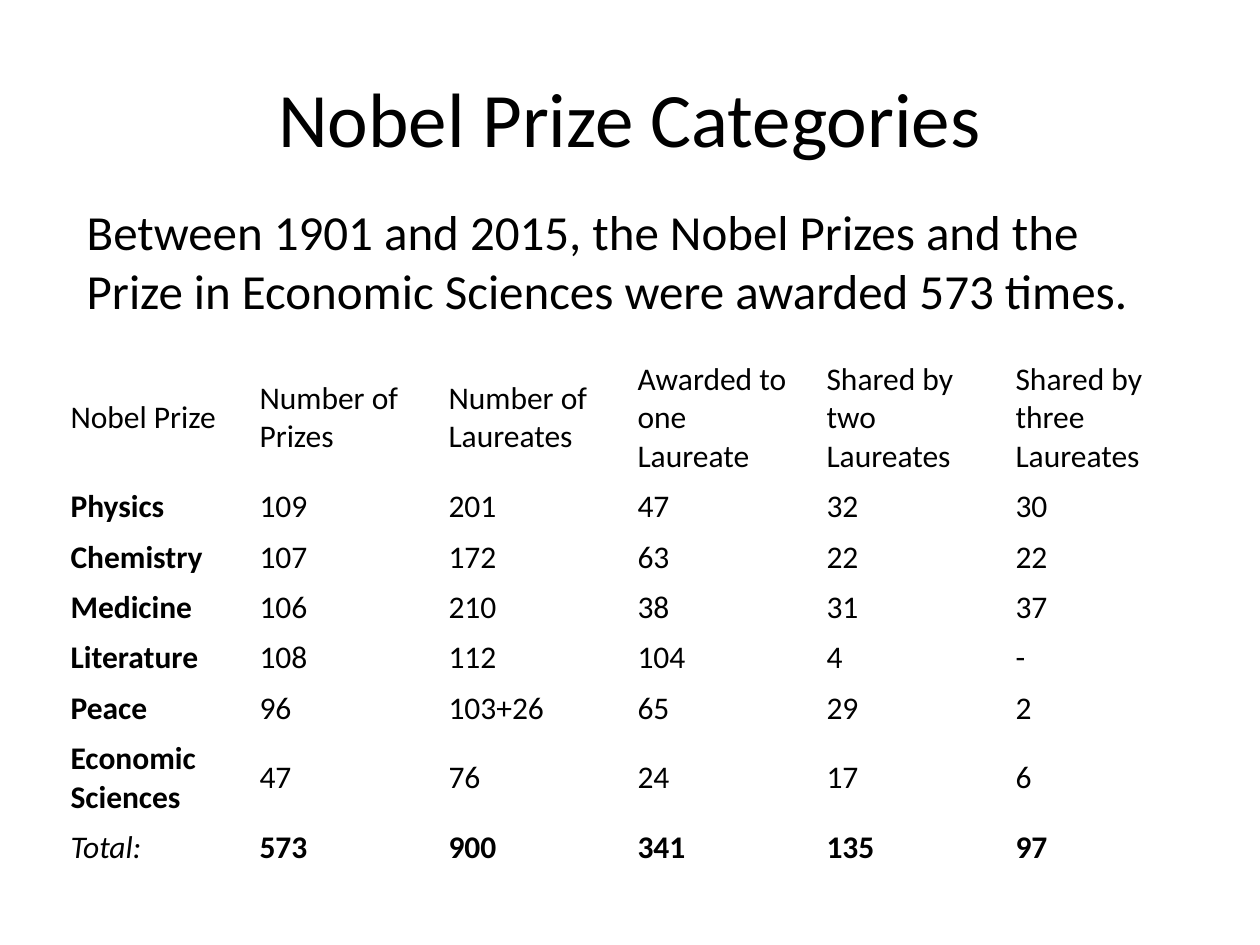
from dataclasses import dataclass

import pptx
import pptx.dml.color
import pptx.enum.text
import pptx.util

Inches = pptx.util.Inches
Align = pptx.enum.text.PP_ALIGN
Anchor = pptx.enum.text.MSO_ANCHOR


@dataclass(frozen=True)
class Theme:
    font: str = "Calibri"
    ink: str = "000000"
    title_size: int = 44
    intro_size: int = 28
    table_size: int = 18


THEME = Theme()

TITLE = "Nobel Prize Categories"
INTRO = ("Between 1901 and 2015, the Nobel Prizes and the "
         "Prize in Economic Sciences were awarded 573 times.")
HEADINGS = ("Nobel Prize", "Number of Prizes", "Number of Laureates",
            "Awarded to one Laureate", "Shared by two Laureates",
            "Shared by three Laureates")
PRIZES = (
    ("Physics", "109", "201", "47", "32", "30"),
    ("Chemistry", "107", "172", "63", "22", "22"),
    ("Medicine", "106", "210", "38", "31", "37"),
    ("Literature", "108", "112", "104", "4", "-"),
    ("Peace", "96", "103+26", "65", "29", "2"),
    ("Economic Sciences", "47", "76", "24", "17", "6"),
)
TOTALS = ("Total:", "573", "900", "341", "135", "97")

COLUMN_WIDTH = 1.5
HEADING_HEIGHT, ROW_HEIGHT, TWO_LINE_HEIGHT = 1.01, 0.4, 0.7


def add_run(paragraph, text, size, bold=False, italic=False):
    run = paragraph.add_run()
    run.text = text
    run.font.name = THEME.font
    run.font.size = pptx.util.Pt(size)
    run.font.bold = bold
    run.font.italic = italic
    run.font.color.rgb = pptx.dml.color.RGBColor.from_string(THEME.ink)


def add_text(slide, text, box, size, align=Align.LEFT, anchor=Anchor.TOP):
    frame = slide.shapes.add_textbox(*map(Inches, box)).text_frame
    frame.word_wrap = True
    frame.vertical_anchor = anchor
    frame.paragraphs[0].alignment = align
    add_run(frame.paragraphs[0], text, size)


def fill_row(row, texts, bold_label=False, italic_label=False, bold_values=False):
    for column, (cell, text) in enumerate(zip(row.cells, texts)):
        is_label = column == 0
        cell.fill.background()
        cell.vertical_anchor = Anchor.MIDDLE
        add_run(cell.text_frame.paragraphs[0], text, THEME.table_size,
                bold=bold_label if is_label else bold_values,
                italic=is_label and italic_label)


def add_prize_table(slide, left, top):
    heights = [HEADING_HEIGHT]
    heights += [TWO_LINE_HEIGHT if " " in prize[0] else ROW_HEIGHT for prize in PRIZES]
    heights.append(ROW_HEIGHT)
    table = slide.shapes.add_table(
        len(heights), len(HEADINGS), Inches(left), Inches(top),
        Inches(COLUMN_WIDTH * len(HEADINGS)), Inches(sum(heights))).table
    table.first_row = False
    table.horz_banding = False
    for column in table.columns:
        column.width = Inches(COLUMN_WIDTH)
    rows = list(table.rows)
    for row, height in zip(rows, heights):
        row.height = Inches(height)

    fill_row(rows[0], HEADINGS)
    for row, prize in zip(rows[1:], PRIZES):
        fill_row(row, prize, bold_label=True)
    fill_row(rows[-1], TOTALS, italic_label=True, bold_values=True)


def main():
    deck = pptx.Presentation()
    deck.slide_width, deck.slide_height = Inches(10), Inches(7.5)
    slide = deck.slides.add_slide(deck.slide_layouts[6])
    add_text(slide, TITLE, (0.5, 0.3, 9, 1.25), THEME.title_size,
             Align.CENTER, Anchor.MIDDLE)
    add_prize_table(slide, 0.46, 2.81)
    add_text(slide, INTRO, (0.59, 1.55, 8.74, 1.04), THEME.intro_size)
    deck.save("out.pptx")


if __name__ == "__main__":
    main()
